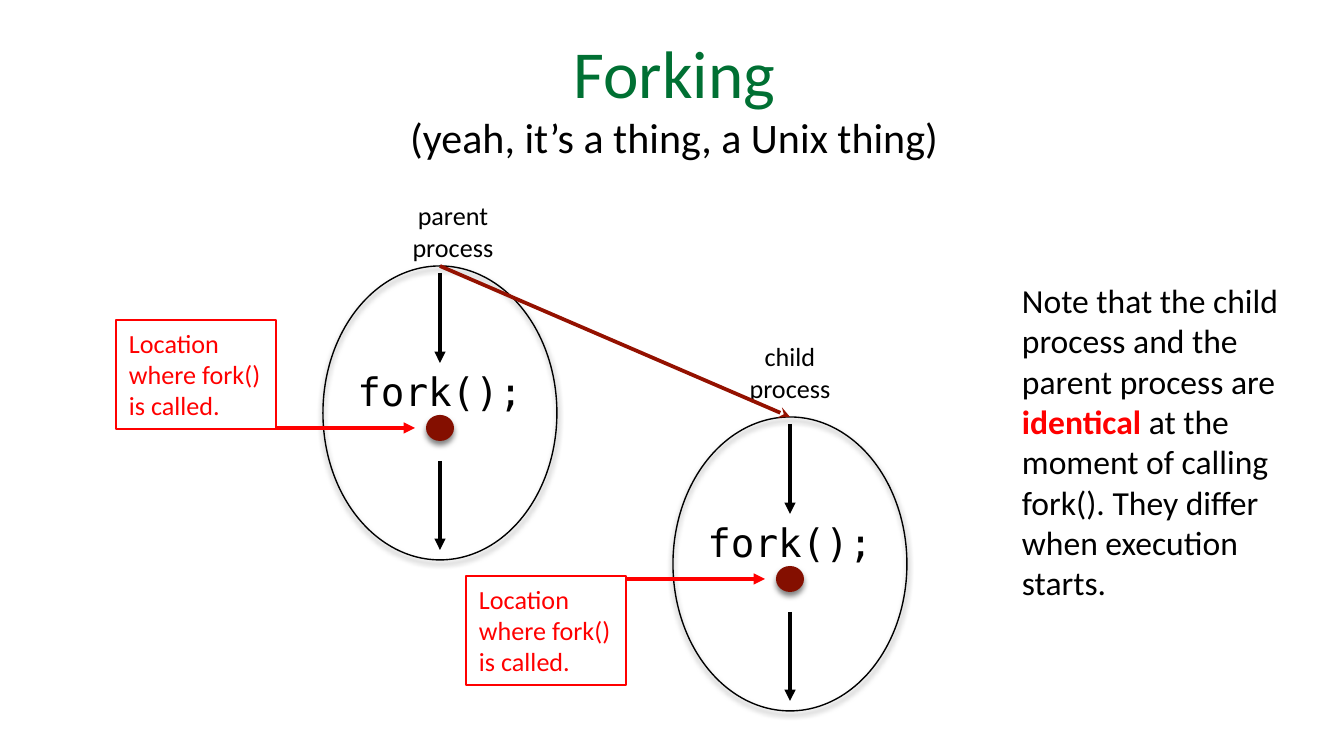
from dataclasses import dataclass

from lxml import etree
from pptx import Presentation
from pptx import util as u
from pptx.dml.color import RGBColor
from pptx.enum import shapes, text
from pptx.oxml import ns

PX_PER_INCH = 134.4
PROCESS_STEP = (350, 151)  # from the parent's drawing to the child's


@dataclass(frozen=True)
class Theme:
    font: str = "Calibri"
    mono: str = "DejaVu Sans Mono"
    green: str = "007033"
    black: str = "000000"
    red: str = "FF0000"
    dot: str = "840F00"
    spawn: str = "941100"
    title: float = 36
    subtitle: float = 22.5
    code: float = 21
    note: float = 18
    label: float = 14
    outline: float = 0.75
    arrow: float = 2


THEME = Theme()


def px(length):
    return u.Emu(round(length * 914400 / PX_PER_INCH))


def add_span(para, words, size, color=THEME.black, font=THEME.font, bold=False):
    span = para.add_run()
    span.text = words
    span.font.name, span.font.size, span.font.bold = font, u.Pt(size), bold
    span.font.color.rgb = RGBColor.from_string(color)


def fill_text(shape, paragraphs, align="CENTER", anchor="MIDDLE", inset=(5, 5), wrap=True):
    """Write paragraphs, each a list of (words, format) spans, into a shape."""
    frame = shape.text_frame
    frame.word_wrap = wrap
    frame.vertical_anchor = getattr(text.MSO_ANCHOR, anchor)
    frame.margin_left = frame.margin_right = px(inset[0])
    frame.margin_top = frame.margin_bottom = px(inset[1])
    for index, spans in enumerate(paragraphs):
        para = frame.add_paragraph() if index else frame.paragraphs[0]
        para.alignment = getattr(text.PP_ALIGN, align)
        for words, style in spans:
            add_span(para, words, **style)


def add_text(page, area, paragraphs, **layout):
    box = page.shapes.add_textbox(*map(px, area))
    fill_text(box, paragraphs, **layout)
    return box


def add_shape(page, kind, area, fill=None, line=None):
    shape = page.shapes.add_shape(kind, *map(px, area))
    shape.shadow.inherit = False
    if fill:
        shape.fill.solid()
        shape.fill.fore_color.rgb = RGBColor.from_string(fill)
    else:
        shape.fill.background()
    if line:
        shape.line.color.rgb = RGBColor.from_string(line)
        shape.line.width = u.Pt(THEME.outline)
    else:
        shape.line.fill.background()
    return shape


def add_ellipse(page, area, **paint):
    """Draw an ellipse with a soft shadow straight below it."""
    ellipse = add_shape(page, shapes.MSO_SHAPE.OVAL, area, **paint)
    effects = ellipse._element.spPr.find(ns.qn("a:effectLst"))
    shadow = etree.SubElement(effects, ns.qn("a:outerShdw"), blurRad=str(u.Pt(3)),
                              dist=str(u.Pt(2)), dir="5400000", rotWithShape="0")
    color = etree.SubElement(shadow, ns.qn("a:srgbClr"), val=THEME.black)
    etree.SubElement(color, ns.qn("a:alpha"), val="50000")
    return ellipse


def add_arrow(page, start, end, color=THEME.black, head="triangle"):
    arrow = page.shapes.add_connector(shapes.MSO_CONNECTOR.STRAIGHT, *map(px, start + end))
    arrow.line.color.rgb = RGBColor.from_string(color)
    arrow.line.width = u.Pt(THEME.arrow)
    etree.SubElement(arrow.line._get_or_add_ln(), ns.qn("a:tailEnd"), type=head)
    etree.SubElement(arrow._element.spPr, ns.qn("a:effectLst"))
    return arrow


def add_process(page, dx, dy):
    ellipse = add_ellipse(page, (323 + dx, 266 + dy, 234, 294), line=THEME.black)
    center = 440 + dx
    add_arrow(page, (center, 273 + dy), (center, 363 + dy))
    add_text(page, (center - 88, 361 + dy, 176, 59),
             [[("fork();", dict(size=THEME.code, font=THEME.mono))]])
    add_arrow(page, (center, 461 + dy), (center, 550 + dy))
    add_ellipse(page, (center - 14, 415 + dy, 28, 26), fill=THEME.dot)
    add_arrow(page, (276 + dx, 428 + dy), (415 + dx, 428 + dy), color=THEME.red)
    return ellipse


def add_label(page, area, words):
    add_text(page, area, [[(words, dict(size=THEME.label))]])


def add_callout(page, left, top):
    box = add_shape(page, shapes.MSO_SHAPE.RECTANGLE, (left, top, 160, 109), line=THEME.red)
    style = dict(size=THEME.label, color=THEME.red)
    lines = ("Location", "where fork()", "is called.")
    fill_text(box, [[(line, style)] for line in lines],
              align="LEFT", anchor="TOP", inset=(13, 7), wrap=False)


def main():
    deck = Presentation()
    deck.slide_width, deck.slide_height = px(1344), px(756)
    page = deck.slides.add_slide(deck.slide_layouts[6])

    add_text(page, (276, 3, 797, 187), [
        [("Forking", dict(size=THEME.title, color=THEME.green))],
        [("(yeah, it’s a thing, a Unix thing)", dict(size=THEME.subtitle))],
    ])

    parent = add_process(page, 0, 0)
    child = add_process(page, *PROCESS_STEP)
    add_label(page, (383, 203, 140, 56), "parent process")
    add_label(page, (724, 344, 132, 56), "child process")
    spawn = add_arrow(page, (440, 266), (790, 417), color=THEME.spawn, head="stealth")
    spawn.begin_connect(parent, 0)
    spawn.end_connect(child, 0)

    add_callout(page, 116, 320)
    add_callout(page, 466, 576)

    plain = dict(size=THEME.note)
    note = add_text(page, (1009, 273, 314, 339), [[
        ("Note that the child process and the parent process are ", plain),
        ("identical", dict(size=THEME.note, color=THEME.red, bold=True)),
        (" at the moment of calling fork(). They differ when execution starts.", plain),
    ]], align="LEFT", anchor="TOP", inset=(13, 7))
    note.text_frame.auto_size = text.MSO_AUTO_SIZE.SHAPE_TO_FIT_TEXT

    deck.save("out.pptx")


if __name__ == "__main__":
    main()
